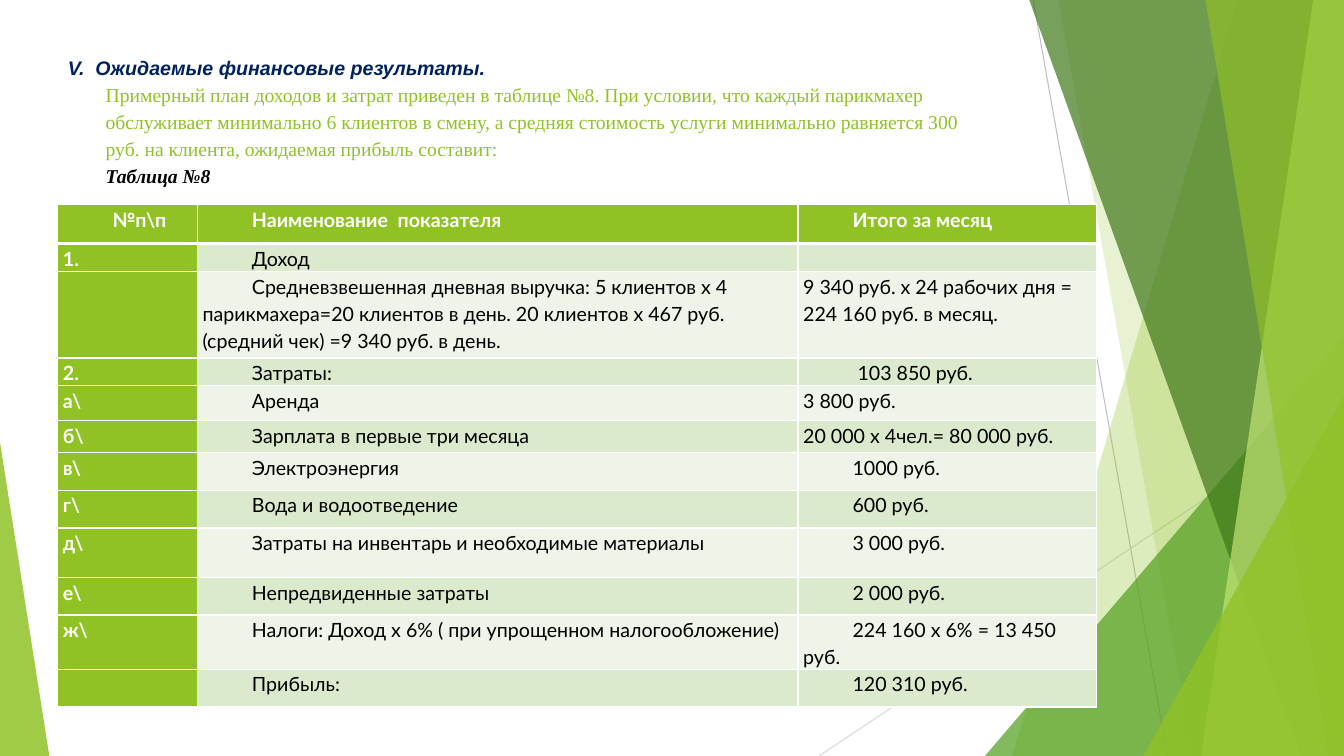
from lxml import etree
from pptx import Presentation, util as u
from pptx.dml.color import RGBColor
from pptx.enum import shapes, text
from pptx.oxml import ns

PX = 9525
THEME = dict(green="90C226", leaf="54A021", dark="3F7819", lime="C0E474",
             navy="002060", black="000000", white="FFFFFF", odd="DBE9CD",
             even="EEF4E8", ray="BFBFBF", pale_ray="D9D9D9",
             size=14, spacing=1.15, table_font="Lato")


def sub(parent, tag, **attrs):
    return etree.SubElement(parent, ns.qn(tag), attrs)


def format_run(r, color, **fmt):
    for name, value in {"size": u.Pt(THEME["size"]), **fmt}.items():
        setattr(r.font, name, value)
    r.font.color.rgb = RGBColor.from_string(THEME[color])


prs = Presentation()
prs.slide_width, prs.slide_height = 1280 * PX, 720 * PX
slide = prs.slides.add_slide(prs.slide_layouts[5])
sps = slide.shapes

# Thin rays behind the facets
for x1, y1, x2, y2, color in [(984, 0, 1112, 720, "ray"),
                              (1280, 387, 780, 720, "pale_ray")]:
    ray = sps.add_connector(shapes.MSO_CONNECTOR.STRAIGHT,
                            x1 * PX, y1 * PX, x2 * PX, y2 * PX)
    ray.line.color.rgb = RGBColor.from_string(THEME[color])
    ray.line.width = u.Pt(0.75)
    sub(ray._element.spPr, "a:effectLst")

# Facets: (top x, bottom x) run to the right edge; four numbers are a triangle box
facets = [((1179, 964), None, "green", 30), ((1008, 1136), None, "green", 20),
          ((938, 320, 342, 400), 1, "leaf", 72), ((980, 1239), None, "dark", 70),
          ((1251, 1144), None, "lime", 70), ((1148, 1265), None, "green", 65),
          ((1089, 377, 191, 343), 1, "green", 80), ((0, 421, 47, 299), 0, "green", 85)]
for box, apex, color, alpha in facets:
    if apex is None:
        top, bottom = box
        outline = sps.build_freeform(top, -1, scale=PX)
        outline.add_line_segments([(1280, -1), (1280, 720), (bottom, 720)], close=True)
        sp = outline.convert_to_shape()
    else:
        sp = sps.add_shape(shapes.MSO_SHAPE.ISOSCELES_TRIANGLE, *[v * PX for v in box])
        sp.adjustments[0] = apex
    sp.shadow.inherit = False
    sp.line.fill.background()
    sp.fill.solid()
    sp.fill.fore_color.rgb = RGBColor.from_string(THEME[color])
    sub(sp.fill._xPr.find(".//" + ns.qn("a:srgbClr")), "a:alpha", val=str(alpha * 1000))

# Title with the introduction
title = sps.title
title.left, title.top, title.width, title.height = [v * PX for v in (55, 45, 902, 138)]
tf = title.text_frame
for name, value in dict(word_wrap=True, auto_size=text.MSO_AUTO_SIZE.NONE,
                        vertical_anchor=text.MSO_ANCHOR.MIDDLE).items():
    setattr(tf, name, value)
p = tf.paragraphs[0]
p.alignment, p.line_spacing = text.PP_ALIGN.LEFT, THEME["spacing"]
pPr = p._p.get_or_add_pPr()
pPr.set("marL", str(36 * PX))
pPr.set("indent", str(-36 * PX))
heading = [
    ("V.  Ожидаемые финансовые результаты.", "navy", "Arial", True),
    ("Примерный план доходов и затрат приведен в таблице №8. При условии, что каждый "
     "парикмахер обслуживает минимально 6 клиентов в смену, а средняя стоимость услуги "
     "минимально равняется 300 руб. на клиента, ожидаемая прибыль составит:",
     "green", "Times New Roman", False),
    ("Таблица №8", "black", "Times New Roman", True)]
for i, (words, color, font, strong) in enumerate(heading):
    if i:
        p.add_line_break()
    r = p.add_run()
    r.text = words
    format_run(r, color, name=font, bold=strong, italic=strong)
for br in p._p.findall(ns.qn("a:br")):
    sub(br, "a:rPr", sz=str(THEME["size"] * 100))

# Table of income and costs
rows = [
    (37, "№п\\п", "Наименование  показателя", "Итого за месяц"),
    (27, "1.", "Доход", ""),
    (82, "", "Средневзвешенная дневная выручка: 5 клиентов х 4 парикмахера=20 клиентов "
     "в день. 20 клиентов х 467 руб. (средний чек) =9 340 руб. в день.",
     "9 340 руб. х 24 рабочих дня = 224 160 руб. в месяц."),
    (26, "2.", "Затраты:", " 103 850 руб."),
    (34, "а\\", "Аренда", "3 800 руб."),
    (30, "б\\", "Зарплата в первые три месяца", "20 000 х 4чел.= 80 000 руб."),
    (36, "в\\", "Электроэнергия", "1000 руб."),
    (36, "г\\", "Вода и водоотведение", "600 руб."),
    (47, "д\\", "Затраты на инвентарь и необходимые материалы", "3 000 руб."),
    (36, "е\\", "Непредвиденные затраты", "2 000 руб."),
    (47, "ж\\", "Налоги: Доход х 6% ( при упрощенном налогообложение)",
     "224 160 х 6% = 13 450 руб."),
    (36, "", "Прибыль:", "120 310 руб.")]
flush_totals = {2, 4, 5}
widths = (133, 572, 284)
table = sps.add_table(len(rows), len(widths), 55 * PX, 195 * PX, sum(widths) * PX,
                      sum(row[0] for row in rows) * PX).table
table.first_row = table.horz_banding = False
for col, width in zip(table.columns, widths):
    col.width = width * PX
for i, (height, *words) in enumerate(rows):
    table.rows[i].height = height * PX
    for j, word in enumerate(words):
        cell = table.cell(i, j)
        strong = i == 0 or j == 0
        for name, value in dict(margin_left=5 * PX, margin_right=5 * PX,
                                margin_top=0, margin_bottom=0).items():
            setattr(cell, name, value)
        cell.fill.solid()
        fill = "green" if strong else "odd" if i % 2 else "even"
        cell.fill.fore_color.rgb = RGBColor.from_string(THEME[fill])

        # Cell borders, heavier under the header
        tcPr = cell._tc.get_or_add_tcPr()
        for k, side in enumerate("LRTB"):
            heavy = (i, side) in {(0, "B"), (1, "T")}
            ln = sub(tcPr, f"a:ln{side}", w=str(u.Pt(3 if heavy else 1)))
            sub(sub(ln, "a:solidFill"), "a:srgbClr", val=THEME["white"])
            tcPr.insert(k, ln)

        # Cell text
        p = cell.text_frame.paragraphs[0]
        p.line_spacing = THEME["spacing"]
        p.alignment = text.PP_ALIGN.JUSTIFY if strong else text.PP_ALIGN.LEFT
        if i == 0 or j == 1 or (j == 2 and i not in flush_totals):
            p._p.get_or_add_pPr().set("indent", str(47 * PX))
        if word:
            r = p.add_run()
            r.text = word
            format_run(r, "white" if strong else "black",
                       name=THEME["table_font"], bold=strong)
        else:
            sub(p._p, "a:endParaRPr", sz=str(THEME["size"] * 100))

prs.save("out.pptx")
